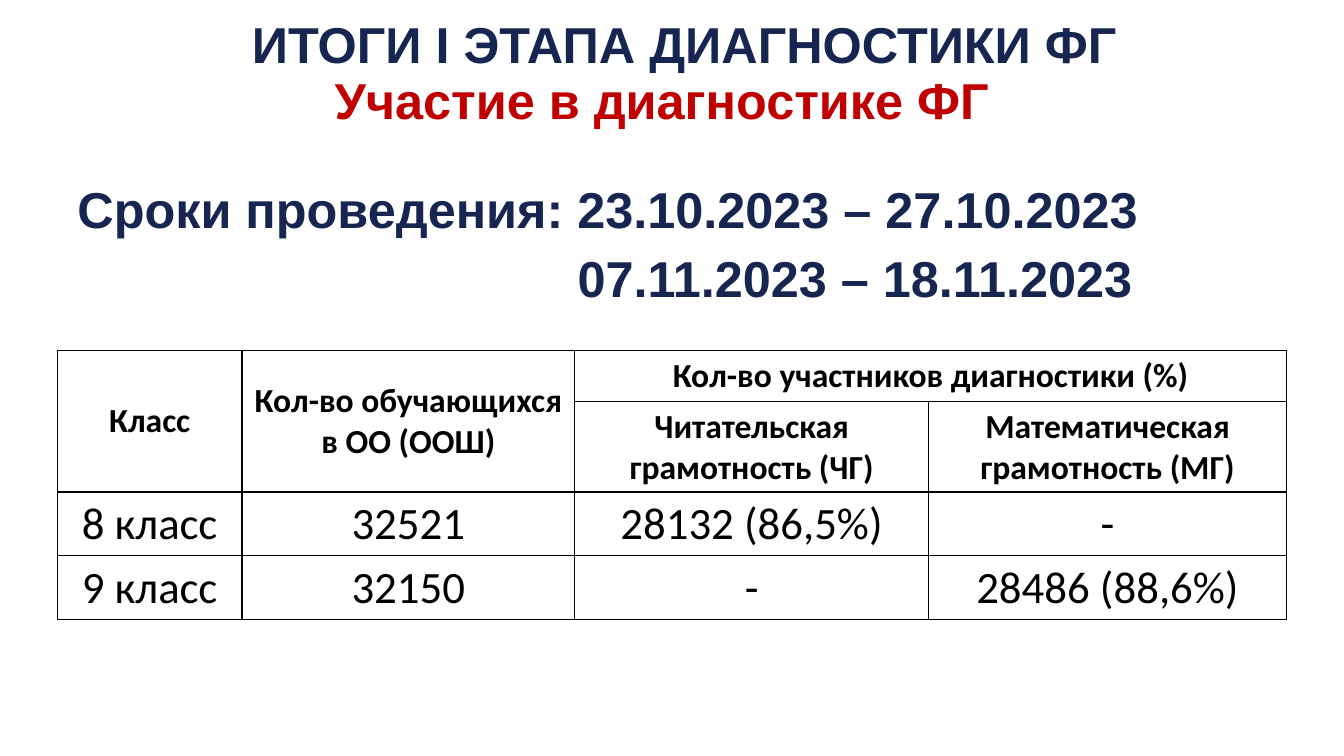
from lxml import etree
from pptx import Presentation
from pptx.dml.color import RGBColor
from pptx.enum.text import MSO_ANCHOR as Anchor, PP_ALIGN as Align
from pptx.oxml.ns import qn
from pptx.util import Inches, Pt

NAVY, RED, BLACK = "172551", "C00000", "000000"
COLUMN_WIDTHS = [1.83, 3.3, 3.51, 3.55]
ROW_HEIGHTS = [0.5, 0.9, 0.63, 0.63]
HEADER_ROWS = 2
TABLE_ROWS = [
    ["Класс", "Кол-во обучающихся\nв ОО (ООШ)", "Кол-во участников диагностики (%)", ""],
    ["", "", "Читательская грамотность (ЧГ)", "Математическая грамотность (МГ)"],
    ["8 класс", "32521", "28132 (86,5%)", "-"],
    ["9 класс", "32150", "-", "28486 (88,6%)"],
]
# Merged header cells: first and last (row, column)
MERGES = [((0, 0), (1, 0)), ((0, 1), (1, 1)), ((0, 2), (0, 3))]


def rgb(color):
    return RGBColor.from_string(color)


def write_lines(frame, lines, color, align, **font_format):
    """Put each line in its own paragraph."""
    for index, line in enumerate(lines):
        para = frame.paragraphs[0] if index == 0 else frame.add_paragraph()
        para.alignment = align
        span = para.add_run()
        span.text = line
        span.font.color.rgb = rgb(color)
        for name, value in font_format.items():
            setattr(span.font, name, value)


def add_heading(page, place, lines, color, align=Align.CENTER):
    box = page.shapes.add_textbox(*map(Inches, place))
    frame = box.text_frame
    frame.word_wrap = True
    write_lines(frame, lines, color, align, name="Arial", size=Pt(36), bold=True)
    for para in frame.paragraphs:
        para.space_after = Pt(6)
    return frame


def set_borders(cell, color=BLACK, width=1):
    properties = cell._tc.get_or_add_tcPr()
    for index, side in enumerate(("a:lnL", "a:lnR", "a:lnT", "a:lnB")):
        line = etree.Element(qn(side), w=str(Pt(width)))
        fill = etree.SubElement(line, qn("a:solidFill"))
        etree.SubElement(fill, qn("a:srgbClr"), val=color)
        properties.insert(index, line)


def add_participation_table(page, place):
    table = page.shapes.add_table(
        len(TABLE_ROWS), len(COLUMN_WIDTHS), *map(Inches, place)).table
    for column, width in zip(table.columns, COLUMN_WIDTHS):
        column.width = Inches(width)
    for row, height in zip(table.rows, ROW_HEIGHTS):
        row.height = Inches(height)
    for first, last in MERGES:
        table.cell(*first).merge(table.cell(*last))

    for row_index, texts in enumerate(TABLE_ROWS):
        is_header = row_index < HEADER_ROWS
        for column_index, text in enumerate(texts):
            cell = table.cell(row_index, column_index)
            cell.fill.background()
            cell.vertical_anchor = Anchor.MIDDLE
            set_borders(cell)
            if text:
                write_lines(cell.text_frame, text.split("\n"), BLACK, Align.CENTER,
                            name="Calibri", size=Pt(24 if is_header else 32),
                            bold=is_header)


def main():
    deck = Presentation()
    deck.slide_width, deck.slide_height = Inches(13.33), Inches(7.5)
    page = deck.slides.add_slide(deck.slide_layouts[6])

    # Title and subtitle
    add_heading(page, (0.29, 0.08, 13, 0.71), ["ИТОГИ I ЭТАПА ДИАГНОСТИКИ ФГ"], NAVY)
    add_heading(page, (1.4, 0.64, 10.33, 0.71), ["Участие в диагностике ФГ"], RED)

    # Dates, the second range indented under the first
    dates = add_heading(
        page, (0.67, 1.72, 11.8, 1.4),
        ["Сроки проведения: 23.10.2023 – 27.10.2023", "07.11.2023 – 18.11.2023"],
        NAVY, Align.LEFT)
    dates.paragraphs[1]._p.get_or_add_pPr().set("marL", str(Inches(4.96)))

    # Participation by grade
    add_participation_table(page, (0.57, 3.48, sum(COLUMN_WIDTHS), sum(ROW_HEIGHTS)))

    deck.save("out.pptx")


if __name__ == "__main__":
    main()
